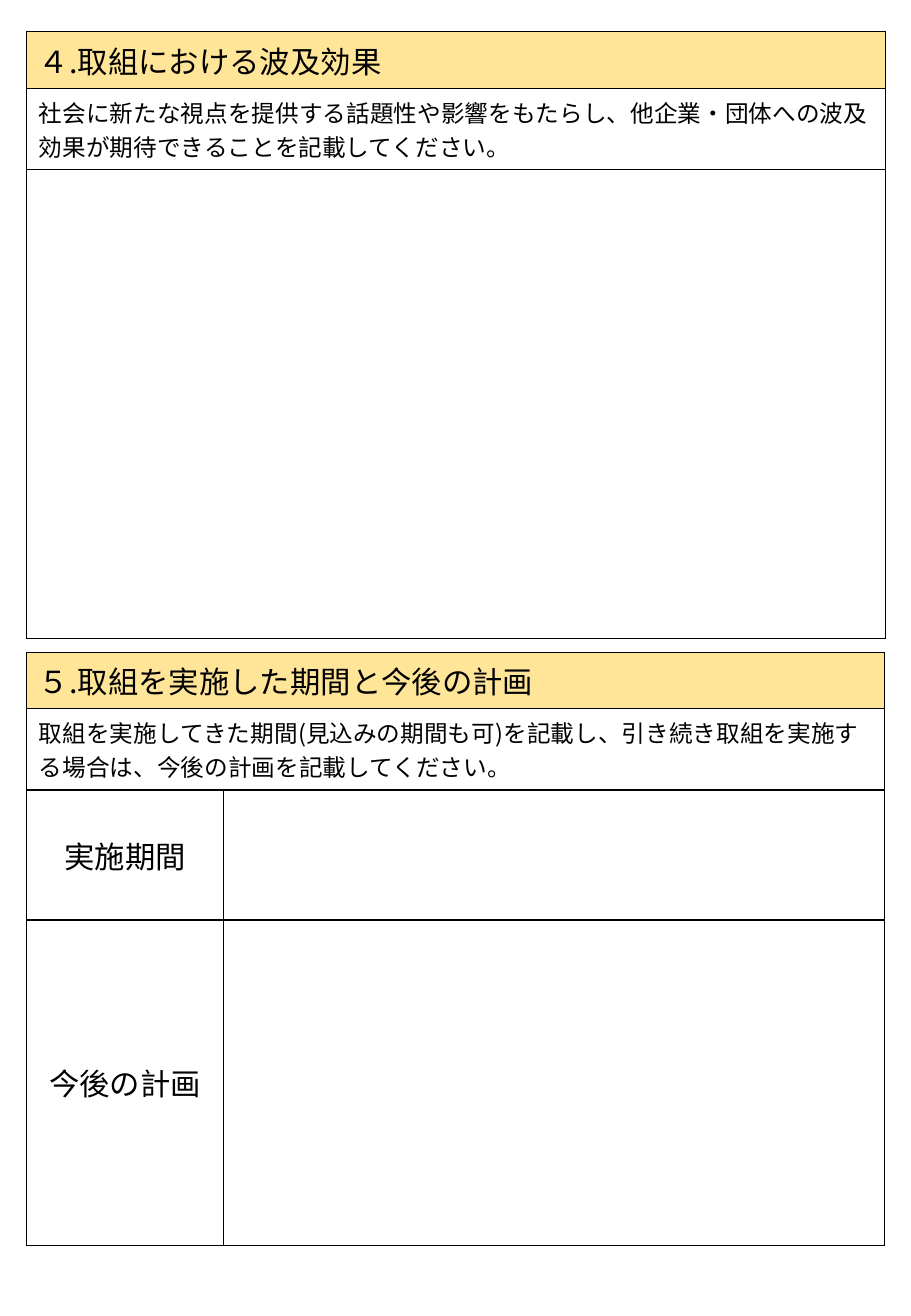
from lxml.etree import SubElement
from pptx import Presentation
from pptx.dml.color import RGBColor
from pptx.enum.text import MSO_ANCHOR as ANCHOR, PP_ALIGN as ALIGN
from pptx.oxml.ns import qn
from pptx.util import Inches, Pt

FONT = "Noto Sans CJK JP"
BLACK, WHITE, YELLOW = "000000", "FFFFFF", "FFE598"
LEFT = 0.22


def style_cell(cell, fill=WHITE, border=BLACK, width=1):
    tc_pr = cell._tc.get_or_add_tcPr()
    for side in ("lnL", "lnR", "lnT", "lnB"):
        ln = SubElement(tc_pr, qn(f"a:{side}"), w=str(Pt(width)))
        solid = SubElement(ln, qn("a:solidFill"))
        SubElement(solid, qn("a:srgbClr"), val=border)
    cell.fill.solid()
    cell.fill.fore_color.rgb = RGBColor.from_string(fill)
    cell.vertical_anchor = ANCHOR.MIDDLE


def write(cell, text, size=18, align=ALIGN.LEFT, color=BLACK):
    p = cell.text_frame.paragraphs[0]
    p.alignment = align
    r = p.add_run()
    r.text = text
    r.font.size = Pt(size)
    r.font.name = FONT
    r.font.color.rgb = RGBColor.from_string(color)
    SubElement(r._r.get_or_add_rPr(), qn("a:ea"), typeface=FONT)


prs = Presentation()
prs.slide_width, prs.slide_height = Inches(7.5), Inches(10.83)
s = prs.slides.add_slide(prs.slide_layouts[6])

# Each section: top, column widths, row heights, heading, guidance, row labels
sections = [
    (0.26, [7.07], [0.47, 0.61, 3.86],
     "４.取組における波及効果",
     "社会に新たな視点を提供する話題性や影響をもたらし、"
     "他企業・団体への波及効果が期待できることを記載してください。",
     []),
    (5.37, [1.62, 5.44], [0.42, 0.66, 1.07, 2.68],
     "５.取組を実施した期間と今後の計画",
     "取組を実施してきた期間(見込みの期間も可)を記載し、"
     "引き続き取組を実施する場合は、今後の計画を記載してください。",
     ["実施期間", "今後の計画"]),
]

for top, widths, heights, heading, guidance, labels in sections:
    table = s.shapes.add_table(
        len(heights), len(widths), Inches(LEFT), Inches(top),
        Inches(sum(widths)), Inches(sum(heights))).table
    table.first_row = table.horz_banding = False
    for column, width in zip(table.columns, widths):
        column.width = Inches(width)
    for i, (row, height) in enumerate(zip(table.rows, heights)):
        row.height = Inches(height)
        for cell in row.cells:
            style_cell(cell, fill=YELLOW if i == 0 else WHITE)

    if len(widths) > 1:
        for i in range(2):
            table.cell(i, 0).merge(table.cell(i, len(widths) - 1))
    write(table.cell(0, 0), heading)
    write(table.cell(1, 0), guidance, size=14)
    for i, label in enumerate(labels, start=2):
        write(table.cell(i, 0), label, align=ALIGN.CENTER)

prs.save("out.pptx")
